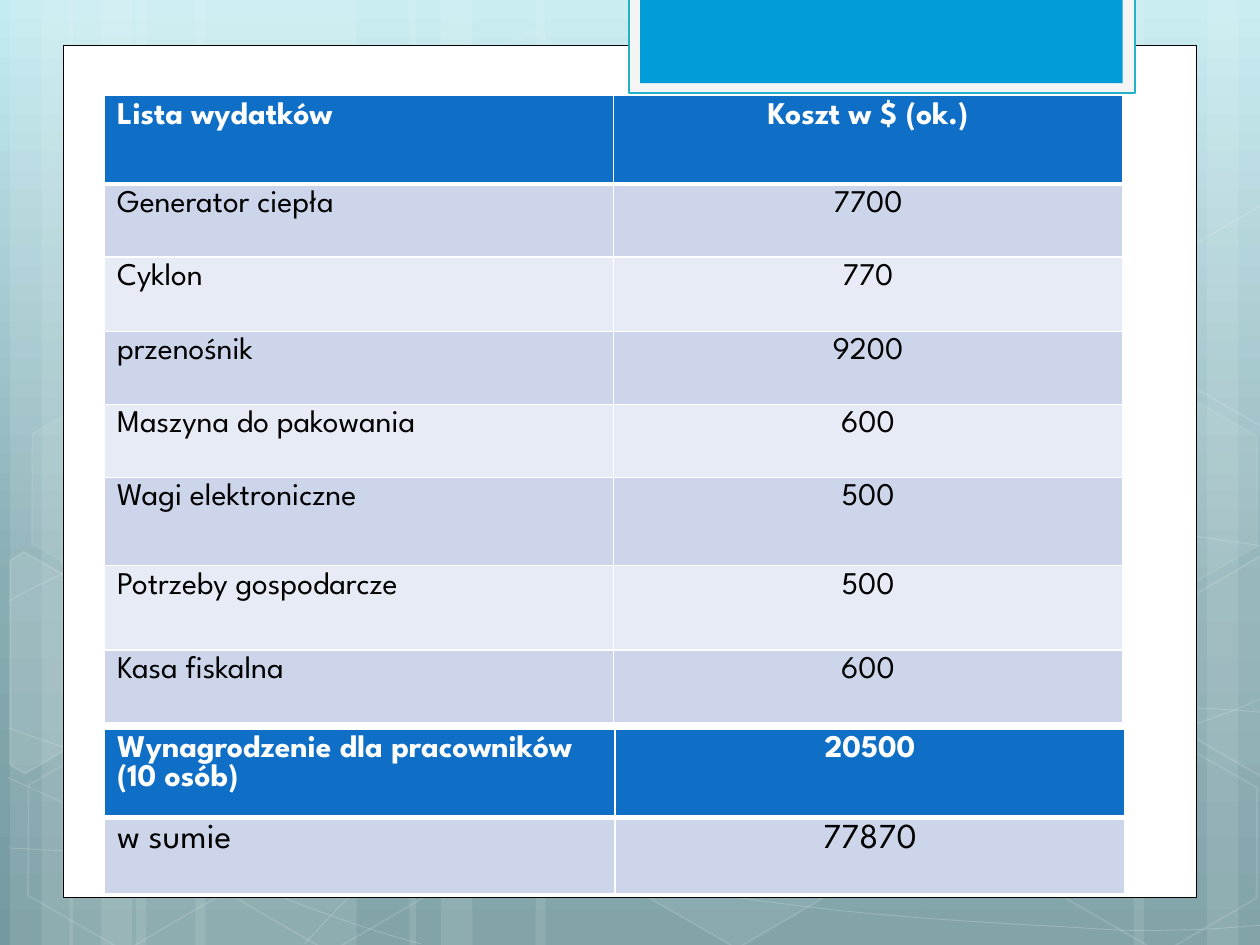
from copy import deepcopy
from typing import NamedTuple, Optional

from lxml.etree import SubElement
from pptx import Presentation
from pptx.dml.color import RGBColor
from pptx.enum.shapes import MSO_SHAPE
from pptx.enum.text import PP_ALIGN
from pptx.oxml.ns import qn
from pptx.util import Inches, Pt

WHITE = RGBColor(255, 255, 255)
BLACK = RGBColor(0, 0, 0)
BLUE = RGBColor(0x0F, 0x6F, 0xC6)
BANDS = (RGBColor(0xCC, 0xD5, 0xEA), RGBColor(0xE7, 0xEB, 0xF5))
SKY = (
    (0, RGBColor(0xC4, 0xEB, 0xF1)),
    (0.62, RGBColor(0x88, 0xAD, 0xB3)),
    (1, RGBColor(0x74, 0x9A, 0xA0)),
)
FONT = "League Spartan"


class Paint(NamedTuple):
    color: RGBColor
    alpha: int = 100


class Edge(NamedTuple):
    color: RGBColor
    width: float
    alpha: int = 100


class Panel(NamedTuple):
    left: float
    top: float
    width: float
    height: float
    fill: Optional[Paint] = None
    edge: Optional[Edge] = None


class Outline(NamedTuple):
    points: list
    closed: bool = False
    fill: Optional[Paint] = None
    edge: Optional[Edge] = None


class Cost(NamedTuple):
    label: str
    value: str
    height: float
    size: int = 18


def fade(fill, alpha: int) -> None:
    if alpha < 100:
        color = fill._xPr.find(".//" + qn("a:srgbClr"))
        SubElement(color, qn("a:alpha"), val=str(alpha * 1000))


def style(shape, fill: Optional[Paint], edge: Optional[Edge]) -> None:
    shape.shadow.inherit = False
    if fill:
        shape.fill.solid()
        shape.fill.fore_color.rgb = fill.color
        fade(shape.fill, fill.alpha)
    else:
        shape.fill.background()
    if edge:
        shape.line.width = Pt(edge.width)
        shape.line.color.rgb = edge.color
        fade(shape.line.fill, edge.alpha)
    else:
        shape.line.fill.background()


def draw_panel(group, panel: Panel, kind=MSO_SHAPE.RECTANGLE):
    shape = group.shapes.add_shape(kind, *map(Inches, panel[:4]))
    style(shape, panel.fill, panel.edge)
    return shape


def draw_hex(group, panel: Panel) -> None:
    shape = draw_panel(group, panel, MSO_SHAPE.HEXAGON)
    shape.adjustments[0] = 0.285
    shape.rotation = 30


def draw_outline(group, item: Outline):
    points = [(Inches(x), Inches(y)) for x, y in item.points]
    pen = group.shapes.build_freeform(*points[0])
    pen.add_line_segments(points[1:], close=item.closed)
    shape = pen.convert_to_shape()
    style(shape, item.fill, item.edge)
    return shape


def draw_curve(group, item: Outline) -> None:
    shape = draw_outline(group, item)
    route = shape._element.find(".//" + qn("a:pathLst"))[0]
    lines = route.findall(qn("a:lnTo"))
    for i in range(0, len(lines), 3):
        bend = SubElement(route, qn("a:cubicBezTo"))
        for line in lines[i:i + 3]:
            bend.append(line[0])
            route.remove(line)


def rule_cell(cell, top: int, bottom: int) -> None:
    props = cell._tc.get_or_add_tcPr()
    for side, width in (("L", 1), ("R", 1), ("T", top), ("B", bottom)):
        line = SubElement(props, qn("a:ln" + side), w=str(Pt(width)))
        fill = SubElement(line, qn("a:solidFill"))
        SubElement(fill, qn("a:srgbClr"), val=str(WHITE))


def draw_table(slide, top: float, width: float, costs: list) -> None:
    height = sum(cost.height for cost in costs)
    table = slide.shapes.add_table(
        len(costs), 2, Inches(0.83), Inches(top), Inches(width), Inches(height)).table
    for i, cost in enumerate(costs):
        table.rows[i].height = Inches(cost.height)
        head = i == 0
        for j, text in enumerate((cost.label, cost.value)):
            cell = table.cell(i, j)
            rule_cell(cell, 3 if i == 1 else 1, 3 if head else 1)
            cell.fill.solid()
            cell.fill.fore_color.rgb = BLUE if head else BANDS[(i - 1) % 2]
            cell.text = text
            para = cell.text_frame.paragraphs[0]
            para.alignment = PP_ALIGN.CENTER if j else PP_ALIGN.LEFT
            para.font.name = FONT
            para.font.size = Pt(cost.size)
            para.font.bold = head
            para.font.color.rgb = WHITE if head else BLACK


STRIPES = [
    (1.08, 1.75), (0.08, 0.5), (0.33, 0.83), (1.55, 1.75), (0.55, 0.5), (0.8, 0.83),
    (7.33, 1.75), (9.58, 0.5), (9, 0.83), (4.25, 3.08), (3.25, 0.5), (3.5, 0.83),
]
CURVES = [
    [(0.07, 6.73), (0.61, 6.76), (1.15, 6.79), (1.9, 6.78), (2.65, 6.77), (3.58, 6.75),
     (4.58, 6.65), (5.58, 6.55), (7, 6.36), (7.92, 6.17), (8.83, 5.98), (9.77, 5.68),
     (10.07, 5.51)],
    [(0.07, 4.77), (0.36, 4.61), (0.65, 4.46), (1.21, 4.31), (1.78, 4.16), (2.59, 3.94),
     (3.47, 3.87), (4.36, 3.8), (5.44, 3.79), (6.54, 3.87), (7.64, 3.95), (9.47, 4.26),
     (10.07, 4.34)],
    [(0.06, 6.17), (1.27, 6.72), (2.47, 7.27), (3.34, 7.49)],
    [(0.07, 5.78), (0.38, 5.89), (0.7, 6), (1.28, 6.16), (1.86, 6.31), (2.73, 6.56),
     (3.57, 6.73), (4.4, 6.9), (5.45, 7.08), (6.28, 7.18), (7.11, 7.29), (8, 7.33),
     (8.53, 7.36), (9.05, 7.4), (9.19, 7.38), (9.45, 7.38), (9.71, 7.37), (9.89, 7.35),
     (10.07, 7.34)],
    [(2.42, 7.49), (2.6, 7.29), (2.78, 7.09), (3.02, 6.91), (3.26, 6.73), (3.6, 6.53),
     (3.88, 6.39), (4.16, 6.25), (4.33, 6.19), (4.7, 6.09), (5.06, 5.99), (5.73, 5.85),
     (6.08, 5.78), (6.44, 5.71), (6.49, 5.71), (6.8, 5.69), (7.11, 5.66), (7.6, 5.63),
     (7.94, 5.62), (8.29, 5.61), (8.86, 5.62), (8.86, 5.62), (8.86, 5.62), (9.53, 5.62),
     (9.53, 5.62), (9.71, 5.63), (9.88, 5.64), (9.97, 5.65), (10.06, 5.66), (10.03, 5.65),
     (10.06, 5.66)],
]
HEXES = [
    (3.34, 0.36, 4, 8), (4.97, 5.89, 6, 12), (0.11, 5.91, 0, 12), (0.14, 3.12, 7, 8),
    (1.74, 5.92, 0, 12), (7.53, 4.53, 10, 12), (8.34, 5.93, 0, 12), (8.34, 3.14, 7, 8),
]
SHARDS = [
    ([(0.08, 4.45), (0.19, 4.38), (0.96, 4.82), (0.95, 5.7), (0.2, 6.14), (0.08, 6.07)], 10),
    ([(9.26, 4.85), (10.01, 4.41), (10.09, 4.46), (10.09, 6.13), (10.02, 6.17), (9.26, 5.73)], 4),
    ([(9.26, 2.07), (10.01, 1.63), (10.1, 1.68), (10.09, 3.35), (10.02, 3.39), (9.26, 2.95)], 0),
]
PANELS = [
    Panel(0.5, 0.36, 9, 6.76, Paint(WHITE), Edge(BLACK, 0.5)),
    Panel(4.99, -0.02, 4.02, 0.76, Paint(RGBColor(0xF5, 0xF5, 0xF5)),
          Edge(RGBColor(0x21, 0xB2, 0xC9), 1.25)),
    Panel(5.08, -0.02, 3.83, 0.68, Paint(RGBColor(0, 0x9D, 0xD9))),
]
COSTS = [
    Cost("Lista wydatków", "Koszt w $ (ok.)", 0.7),
    Cost("Generator ciepła", "7700", 0.58),
    Cost("Cyklon", "770", 0.59),
    Cost("przenośnik", "9200", 0.58),
    Cost("Maszyna do pakowania", "600", 0.58),
    Cost("Wagi elektroniczne", "500", 0.7),
    Cost("Potrzeby gospodarcze", "500", 0.67),
    Cost("Kasa fiskalna", "600", 0.58),
]
TOTALS = [
    Cost("Wynagrodzenie dla pracowników (10 osób)", "20500", 0.7),
    Cost("w sumie", "77870", 0.6, 20),
]


def paint_sky(master) -> None:
    fill = master.background.fill
    fill.gradient()
    fill.gradient_angle = 270
    stops = master._element.find(".//" + qn("a:gsLst"))
    stops.insert(1, deepcopy(stops[0]))
    for stop, (place, color) in zip(fill.gradient_stops, SKY):
        stop.position = place
        stop.color.rgb = color


def draw_decor(group) -> None:
    for left, width in STRIPES:
        draw_panel(group, Panel(left, 0, width, 7.5, Paint(WHITE, 10)))
    for knots in CURVES:
        draw_curve(group, Outline(knots, edge=Edge(WHITE, 0.5, 20)))
    for left, top, tint, rim in HEXES:
        fill = Paint(WHITE, tint) if tint else None
        draw_hex(group, Panel(left, top, 1.75, 1.52, fill, Edge(WHITE, 1, rim)))
    for points, tint in SHARDS:
        fill = Paint(WHITE, tint) if tint else None
        draw_outline(group, Outline(points, True, fill, Edge(WHITE, 1, 12)))
    for panel in PANELS:
        draw_panel(group, panel)


def main() -> None:
    deck = Presentation()
    deck.slide_width, deck.slide_height = Inches(10), Inches(7.5)
    slide = deck.slides.add_slide(deck.slide_layouts[6])
    master = deck.slide_master
    paint_sky(master)
    group = slide.shapes.add_group_shape()
    draw_decor(group)
    for number, item in enumerate(group._element.iter(qn("p:cNvPr")), 100):
        item.set("id", str(number))
    master.shapes._spTree.append(group._element)
    draw_table(slide, 0.76, 8.08, COSTS)
    draw_table(slide, 5.79, 8.1, TOTALS)
    deck.save("out.pptx")


if __name__ == "__main__":
    main()
